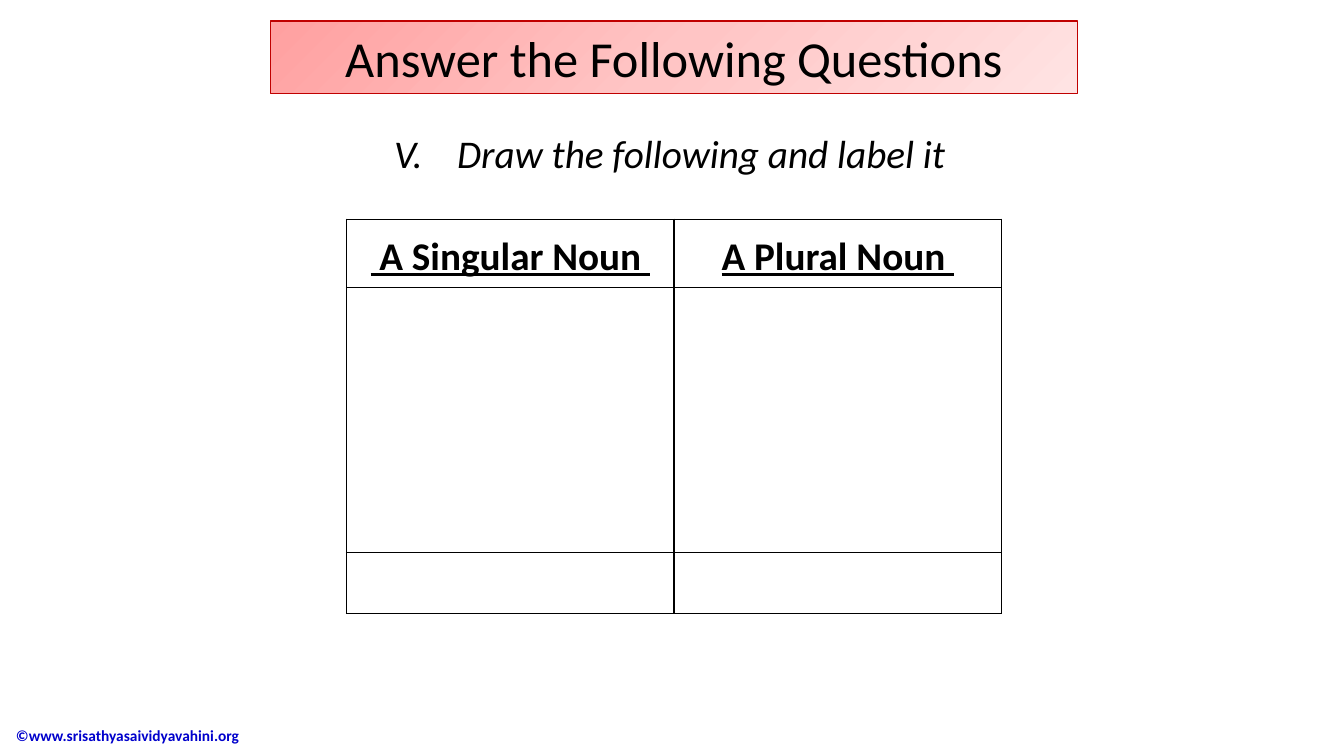
from lxml.etree import SubElement
from pptx import Presentation
from pptx.dml.color import RGBColor
from pptx.enum.text import MSO_ANCHOR, MSO_AUTO_SIZE, PP_ALIGN
from pptx.oxml import parse_xml
from pptx.oxml.ns import nsdecls, qn
from pptx.util import Pt

BLACK = RGBColor(0x00, 0x00, 0x00)
RED = RGBColor(0xC0, 0x00, 0x00)
BLUE = RGBColor(0x00, 0x00, 0xCC)
PINKS = [(0, RGBColor(0xFF, 0xA0, 0xA0)), (50, RGBColor(0xFF, 0xC5, 0xC5)),
         (100, RGBColor(0xFF, 0xE3, 0xE3))]


def style(paragraph, size, color=BLACK):
    paragraph.font.name = "Calibri"
    paragraph.font.size = Pt(size)
    paragraph.font.color.rgb = color


def add_border(cell, side):
    line = SubElement(cell._tc.get_or_add_tcPr(), qn(f"a:{side}"), w=str(Pt(1)))
    fill = SubElement(line, qn("a:solidFill"))
    SubElement(fill, qn("a:srgbClr"), val=str(BLACK))


prs = Presentation()
prs.slide_width = Pt(960)
prs.slide_height = Pt(540)
slide = prs.slides.add_slide(prs.slide_layouts[5])

# Title banner with a gradient spreading from its top left corner
title = slide.shapes.title
title.left, title.top, title.width, title.height = Pt(193.5), Pt(15), Pt(576), Pt(51.5)
title.text_frame.text = "Answer the Following Questions"
title.text_frame.auto_size = MSO_AUTO_SIZE.NONE
title.text_frame.vertical_anchor = MSO_ANCHOR.MIDDLE
title.text_frame.paragraphs[0].alignment = PP_ALIGN.CENTER
style(title.text_frame.paragraphs[0], 36)
title.line.color.rgb = RED
title.line.width = Pt(0.75)
stops = "".join(f'<a:gs pos="{position * 1000}"><a:srgbClr val="{color}"/></a:gs>'
                for position, color in PINKS)
title._element.spPr.find(qn("a:ln")).addprevious(parse_xml(
    f'<a:gradFill {nsdecls("a")} rotWithShape="1"><a:gsLst>{stops}</a:gsLst>'
    '<a:path path="circle"><a:fillToRect r="100000" b="100000"/></a:path></a:gradFill>'))

# Numbered instruction
instruction = slide.shapes.add_textbox(Pt(274.5), Pt(88.5), Pt(412), Pt(41)).text_frame
instruction.word_wrap = False
instruction.auto_size = MSO_AUTO_SIZE.SHAPE_TO_FIT_TEXT
task = instruction.paragraphs[0]
task.text = "Draw the following and label it"
task_props = task._p.get_or_add_pPr()
task_props.set("marL", str(Pt(45)))
task_props.set("indent", str(Pt(-45)))
SubElement(task_props, qn("a:buFont"), typeface="+mj-lt")
SubElement(task_props, qn("a:buAutoNum"), type="romanUcPeriod", startAt="5")
style(task, 28)
task.font.italic = True

# Drawing table
drawings = slide.shapes.add_table(3, 2, Pt(247.5), Pt(156.5), Pt(468), Pt(282)).table
drawings.first_row = False
drawings.horz_banding = False
for column in drawings.columns:
    column.width = Pt(234)
for row, height in zip(drawings.rows, (49, 189, 44)):
    row.height = Pt(height)
for cell in drawings.iter_cells():
    cell.margin_left = cell.margin_right = Pt(5)
    cell.margin_top = cell.margin_bottom = Pt(5)
    for side in ("lnL", "lnR", "lnT", "lnB"):
        add_border(cell, side)
    cell.fill.background()

for column, heading in enumerate((" A Singular Noun ", "A Plural Noun ")):
    cell = drawings.cell(0, column)
    cell.text = heading
    paragraph = cell.text_frame.paragraphs[0]
    paragraph.alignment = PP_ALIGN.CENTER
    paragraph.line_spacing = 1.15
    style(paragraph, 28)
    paragraph.font.bold = True
    paragraph.font.underline = True

# Copyright line
copyright_line = slide.shapes.add_textbox(Pt(4.3), Pt(511), Pt(254), Pt(29)).text_frame
copyright_line.word_wrap = True
copyright_line.vertical_anchor = MSO_ANCHOR.MIDDLE
copyright_line.text = "©www.srisathyasaividyavahini.org"
style(copyright_line.paragraphs[0], 11, BLUE)
copyright_line.paragraphs[0].font.bold = True

prs.save("out.pptx")
